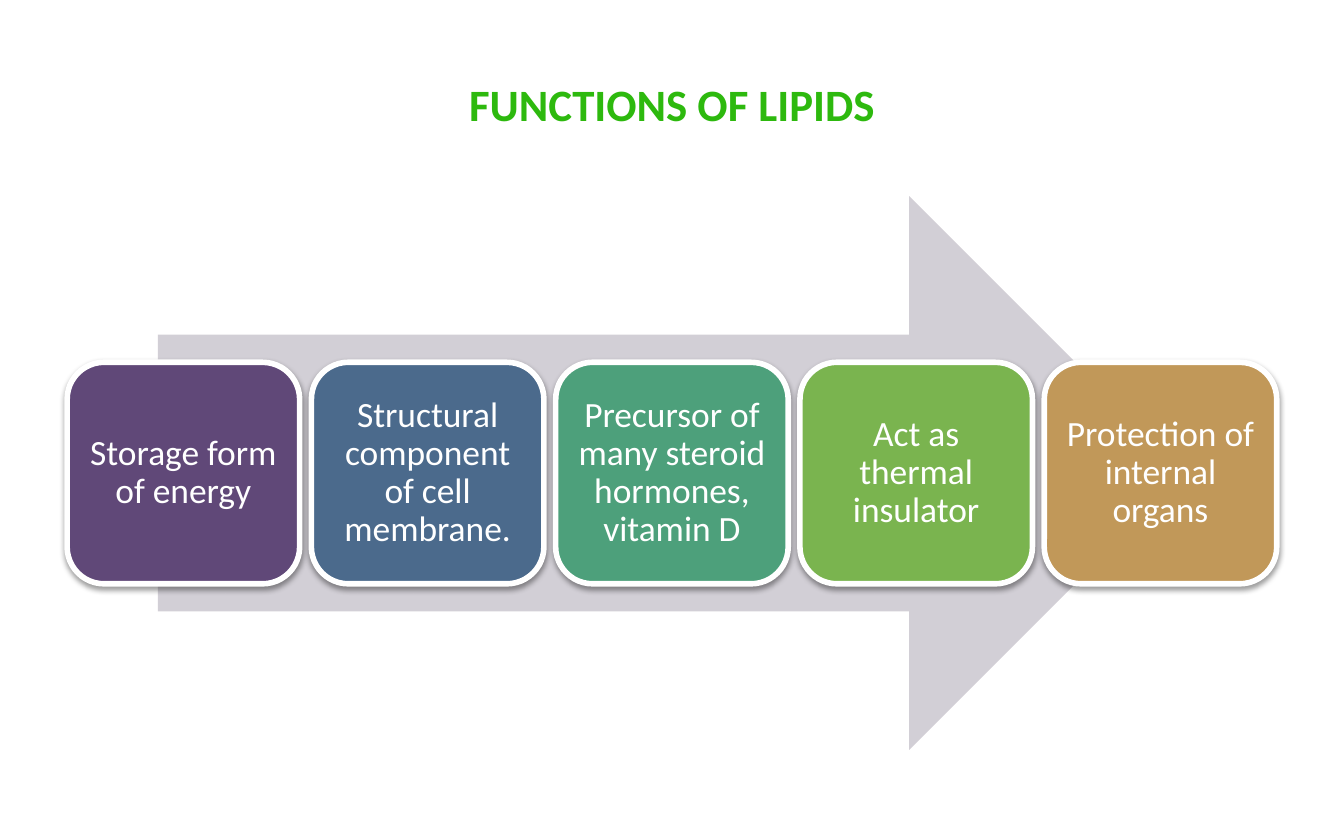
from lxml import etree
from pptx import Presentation
from pptx.dml.color import RGBColor
from pptx.enum import shapes, text
from pptx.oxml import ns
from pptx.util import Inches, Pt

FUNCTIONS = [
    ("Storage form of energy", "604878"),
    ("Structural component of cell membrane.", "4B6A8C"),
    ("Precursor of many steroid hormones, vitamin D", "4DA07B"),
    ("Act as thermal insulator", "7AB44F"),
    ("Protection of internal organs", "C19859"),
]


def paint(target, colour):
    target.solid()
    target.fore_color.rgb = RGBColor.from_string(colour)


def write(box, wording, size, colour, bold=False):
    frame = box.text_frame
    frame.word_wrap = True
    frame.vertical_anchor = text.MSO_ANCHOR.MIDDLE
    para = frame.paragraphs[0]
    para.text = wording
    para.alignment = text.PP_ALIGN.CENTER
    para.font.name = "Calibri"
    para.font.size = Pt(size)
    para.font.bold = bold
    paint(para.font.fill, colour)
    return para


def add_shadow(box):
    effects = box._element.spPr.find(ns.qn("a:effectLst"))
    shadow = etree.SubElement(
        effects, ns.qn("a:outerShdw"), blurRad=str(Pt(3.1)), dist=str(Pt(1.6)),
        dir="5400000", rotWithShape="0")
    black = etree.SubElement(shadow, ns.qn("a:srgbClr"), val="000000")
    etree.SubElement(black, ns.qn("a:alpha"), val="38000")


def add_title(page, left, top, width, height):
    title = page.shapes.add_textbox(left, top, width, height)
    write(title, "FUNCTIONS OF LIPIDS", 24, "2DB90E", bold=True)


def add_arrow(page, left, top, width, height):
    arrow = page.shapes.add_shape(
        shapes.MSO_SHAPE.RIGHT_ARROW, left, top, width, height)
    arrow.shadow.inherit = False
    paint(arrow.fill, "D2CFD6")
    arrow.line.fill.background()


def add_card(page, left, top, width, height, wording, colour):
    card = page.shapes.add_shape(
        shapes.MSO_SHAPE.ROUNDED_RECTANGLE, left, top, width, height)
    card.shadow.inherit = False
    add_shadow(card)
    paint(card.fill, colour)
    paint(card.line.fill, "FFFFFF")
    card.line.width = Pt(3)
    frame = card.text_frame
    frame.margin_left = frame.margin_right = Inches(0.08)
    frame.margin_top = frame.margin_bottom = Inches(0.08)
    para = write(card, wording, 19, "FFFFFF")
    para.line_spacing = 0.9


def add_process(page, left, top, width, height):
    arrow_width = int(width * 0.85)
    add_arrow(page, left + (width - arrow_width) // 2, top, arrow_width, height)
    card_width, card_height = Inches(1.73), int(height * 0.4)
    pitch = (width - card_width) // (len(FUNCTIONS) - 1)
    card_top = top + (height - card_height) // 2
    for index, (wording, colour) in enumerate(FUNCTIONS):
        add_card(page, left + index * pitch, card_top, card_width, card_height,
                 wording, colour)


def main():
    deck = Presentation()
    deck.slide_width, deck.slide_height = Inches(10), Inches(6.25)
    page = deck.slides.add_slide(deck.slide_layouts[6])
    add_title(page, Inches(0.5), Inches(0.25), Inches(9), Inches(1.04))
    add_process(page, Inches(0.5), Inches(1.46), Inches(9), Inches(4.12))
    deck.save("out.pptx")


if __name__ == "__main__":
    main()
